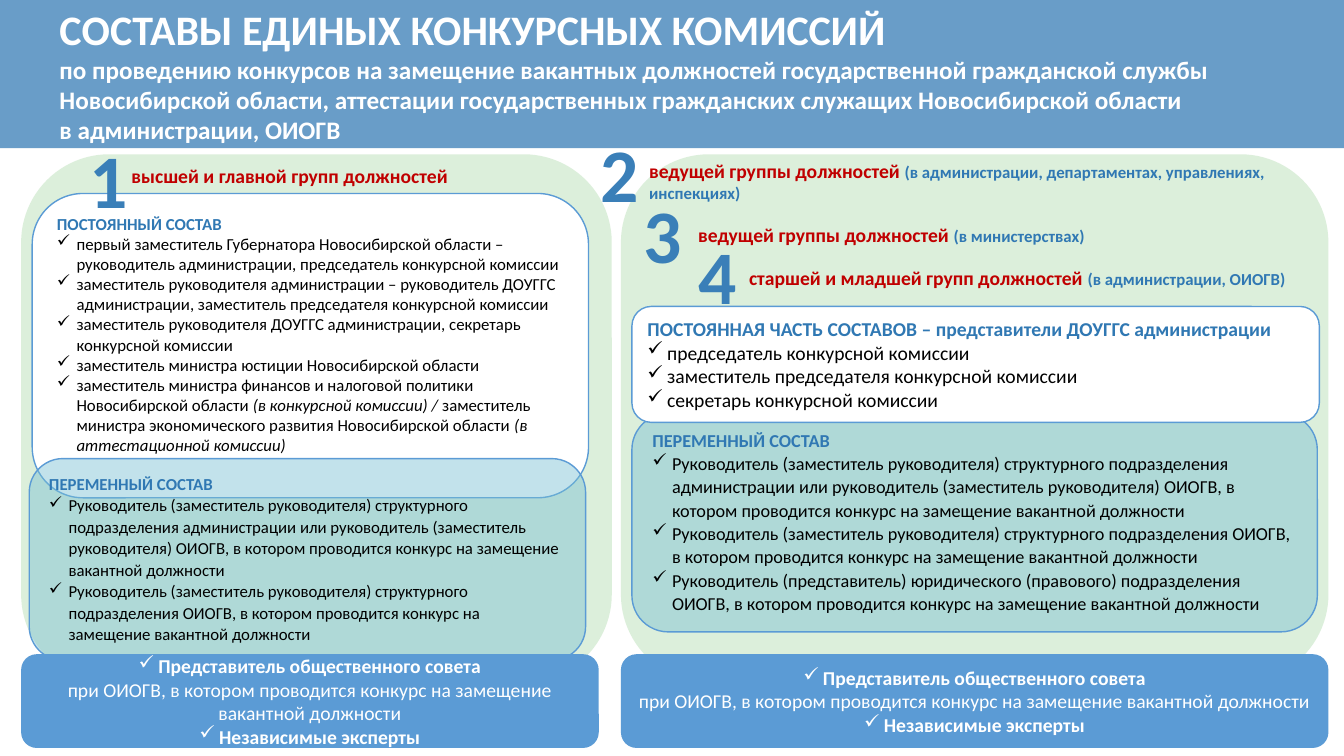
from dataclasses import dataclass

from lxml import etree
from pptx import Presentation
from pptx.dml.color import RGBColor
from pptx.enum import shapes, text
from pptx.oxml import ns
from pptx.util import Pt


@dataclass(frozen=True)
class Theme:
    font: str = "Calibri"
    blue: str = "3078B3"
    digit: str = "3A7FB8"
    bright: str = "5B9BD5"
    green: str = "70BE6C"
    teal: str = "79BFD4"
    red: str = "C00000"
    white: str = "FFFFFF"
    black: str = "000000"
    headline: float = 30
    subtitle: float = 18
    number: float = 54
    large: float = 14
    medium: float = 13
    small: float = 12


THEME = Theme()
HEADLINE = [
    ("СОСТАВЫ ЕДИНЫХ КОНКУРСНЫХ КОМИССИЙ", THEME.headline),
    ("по проведению конкурсов на замещение вакантных должностей государственной гражданской службы "
     "Новосибирской области, аттестации государственных гражданских служащих Новосибирской области",
     THEME.subtitle),
    ("в администрации, ОИОГВ", THEME.subtitle),
]
PERMANENT = [
    [("первый заместитель Губернатора Новосибирской области – руководитель администрации, "
      "председатель конкурсной комиссии", False)],
    [("заместитель руководителя администрации – руководитель ДОУГГС администрации, "
      "заместитель председателя конкурсной комиссии", False)],
    [("заместитель руководителя ДОУГГС администрации, секретарь конкурсной комиссии", False)],
    [("заместитель министра юстиции Новосибирской области", False)],
    [("заместитель министра финансов и налоговой политики Новосибирской области ", False),
     ("(в конкурсной комиссии) / ", True),
     ("заместитель министра экономического развития Новосибирской области", False),
     (" (в аттестационной комиссии)", True)],
]
OFFICERS = [[(role + " конкурсной комиссии", False)]
            for role in ("председатель", "заместитель председателя", "секретарь")]
CONTEST = "в котором проводится конкурс на замещение вакантной должности"
VARIABLE = [
    [("Руководитель (заместитель руководителя) структурного подразделения администрации или "
      "руководитель (заместитель руководителя) ОИОГВ, " + CONTEST, False)],
    [("Руководитель (заместитель руководителя) структурного подразделения ОИОГВ, " + CONTEST, False)],
]
LEGAL = [[("Руководитель (представитель) юридического (правового) подразделения ОИОГВ, "
           + CONTEST, False)]]
GROUPS = [
    (463.7, 113.5, [("ведущей группы должностей ",
                     "(в администрации, департаментах, управлениях,"), ("", "инспекциях)")]),
    (498.7, 159.3, [("ведущей группы должностей ", "(в министерствах)")]),
    (535, 190, [("старшей и младшей групп должностей ", "(в администрации, ОИОГВ)")]),
]
NUMBERS = [("1", 64.1, 95), ("2", 429.1, 90.7), ("3", 459.4, 133.9), ("4", 499, 163.4)]
COLUMNS = [(15.1, 421.9, 412.6), (443.5, 505.4, 505.4)]


def apply(target, values):
    for name, value in values.items():
        setattr(target, name, value)


def style(size, color, bold=True, italic=False):
    return {"size": size, "color": color, "bold": bold, "italic": italic}


def set_fill(shape, color, opacity=100):
    shape.fill.solid()
    shape.fill.fore_color.rgb = RGBColor.from_string(color)
    if opacity < 100:
        tint = shape.element.spPr.find(".//" + ns.qn("a:srgbClr"))
        etree.SubElement(tint, ns.qn("a:alpha"), val=str(opacity * 1000))


def set_frame(frame, anchor=text.MSO_ANCHOR.TOP, margins=(7.2, 3.6)):
    side, edge = margins
    apply(frame, {"word_wrap": True, "auto_size": text.MSO_AUTO_SIZE.NONE,
                  "vertical_anchor": anchor,
                  "margin_left": Pt(side), "margin_right": Pt(side),
                  "margin_top": Pt(edge), "margin_bottom": Pt(edge)})


def add_paragraph(frame, runs, align=text.PP_ALIGN.LEFT, check=False, indent=0, spacing=1.0):
    first = frame.paragraphs[0]
    paragraph = first if not first.runs else frame.add_paragraph()
    apply(paragraph, {"alignment": align, "line_spacing": spacing,
                      "space_before": Pt(0), "space_after": Pt(0)})
    properties = paragraph._p.get_or_add_pPr()
    properties.set("marL", str(Pt(indent)))
    if check:
        properties.set("indent", str(-Pt(indent)))
        etree.SubElement(properties, ns.qn("a:buChar"), char="✓")
    for content, values in runs:
        run = paragraph.add_run()
        run.text = content
        apply(run.font, {"name": THEME.font, "size": Pt(values["size"]),
                         "bold": values["bold"], "italic": values["italic"]})
        run.font.color.rgb = RGBColor.from_string(values["color"])


def add_label(slide, left, top, width, height, margins=(0, 0)):
    box = slide.shapes.add_textbox(Pt(left), Pt(top), Pt(width), Pt(height))
    set_frame(box.text_frame, margins=margins)
    return box.text_frame


def add_panel(slide, bounds, color, opacity=100, outline=None):
    shape = slide.shapes.add_shape(shapes.MSO_SHAPE.ROUNDED_RECTANGLE, *map(Pt, bounds))
    shape.shadow.inherit = False
    set_fill(shape, color, opacity)
    if outline:
        shape.line.color.rgb = RGBColor.from_string(outline)
        shape.line.width = Pt(1)
    else:
        shape.line.fill.background()
    return shape


def add_members(slide, bounds, heading, members, size, color, opacity=100, spacing=1.0):
    frame = add_panel(slide, bounds, color, opacity, THEME.bright).text_frame
    set_frame(frame)
    add_paragraph(frame, [(heading, style(size, THEME.blue))])
    for member in members:
        runs = [(content, style(size, THEME.black, False, italic)) for content, italic in member]
        add_paragraph(frame, runs, check=True, indent=14, spacing=spacing)


def add_footer(slide, left, width):
    frame = add_panel(slide, (left, 467.3, width, 67), THEME.bright).text_frame
    set_frame(frame, text.MSO_ANCHOR.MIDDLE)
    for content, bold in (("Представитель общественного совета", True),
                          ("при ОИОГВ, " + CONTEST, False),
                          ("Независимые эксперты", True)):
        add_paragraph(frame, [(content, style(THEME.large, THEME.white, bold))],
                      text.PP_ALIGN.CENTER, check=bold, indent=14 if bold else 0)


def add_title(slide):
    title = slide.shapes.title
    apply(title, {"left": Pt(0), "top": Pt(0), "width": Pt(960), "height": Pt(105.8)})
    set_fill(title, THEME.blue, 72)
    set_frame(title.text_frame, text.MSO_ANCHOR.MIDDLE)
    for content, size in HEADLINE:
        add_paragraph(title.text_frame, [(content, style(size, THEME.white))], indent=35.3)


def add_groups(slide):
    frame = add_label(slide, 0, 113.8, 414, 24.5, (7.2, 3.6))
    add_paragraph(frame, [("высшей и главной групп должностей", style(THEME.large, THEME.red))],
                  text.PP_ALIGN.CENTER)
    for left, top, lines in GROUPS:
        frame = add_label(slide, left, top, 955 - left, 17 * len(lines))
        for name, scope in lines:
            runs = [(name, style(THEME.large, THEME.red)), (scope, style(THEME.small, THEME.blue))]
            add_paragraph(frame, [run for run in runs if run[0]])


def main():
    presentation = Presentation()
    apply(presentation, {"slide_width": Pt(960), "slide_height": Pt(540)})
    slide = presentation.slides.add_slide(presentation.slide_layouts[5])
    add_title(slide)
    for left, width, _ in COLUMNS:
        add_panel(slide, (left, 110.2, width, 377.3), THEME.green, 24)
    add_groups(slide)
    add_members(slide, (23, 138.2, 397.4, 217.4), "ПОСТОЯННЫЙ СОСТАВ", PERMANENT,
                THEME.small, THEME.white)
    add_members(slide, (20.9, 327.6, 397.4, 144), "ПЕРЕМЕННЫЙ СОСТАВ", VARIABLE,
                THEME.small, THEME.teal, 45, 1.07)
    add_members(slide, (451.4, 295.2, 489.6, 156.2), "ПЕРЕМЕННЫЙ СОСТАВ", VARIABLE + LEGAL,
                THEME.medium, THEME.teal, 45, 1.07)
    add_members(slide, (451.4, 218.9, 491, 82.8),
                "ПОСТОЯННАЯ ЧАСТЬ СОСТАВОВ – представители ДОУГГС администрации", OFFICERS,
                THEME.large, THEME.white)
    for left, _, width in COLUMNS:
        add_footer(slide, left, width)
    for digit, left, top in NUMBERS:
        add_paragraph(add_label(slide, left, top, 30, 66),
                      [(digit, style(THEME.number, THEME.digit))])
    presentation.save("out.pptx")


if __name__ == "__main__":
    main()
